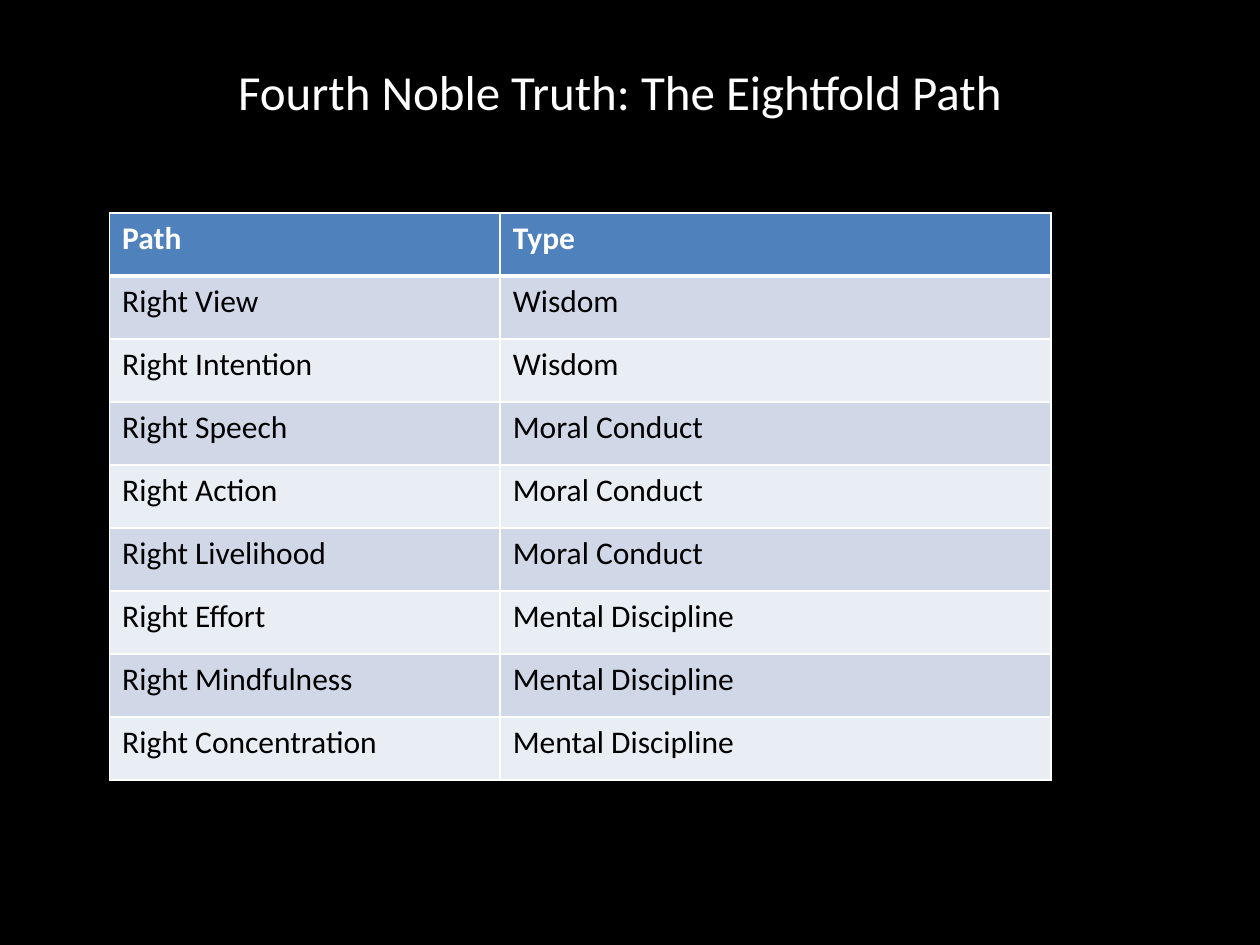
from lxml import etree
from pptx import Presentation
from pptx.dml.color import RGBColor
from pptx.enum.text import MSO_ANCHOR, PP_ALIGN
from pptx.oxml.ns import qn
from pptx.util import Inches, Pt

CENTER = PP_ALIGN.CENTER
MIDDLE = MSO_ANCHOR.MIDDLE
BLACK = RGBColor(0x00, 0x00, 0x00)
WHITE = RGBColor(0xFF, 0xFF, 0xFF)
HEADER_BLUE = RGBColor(0x4F, 0x81, 0xBD)
BANDS = [RGBColor(0xE9, 0xED, 0xF4), RGBColor(0xD0, 0xD8, 0xE8)]

TITLE_FORMAT = {"name": "Calibri", "size": Pt(28), "bold": False}
HEADER_FORMAT = {"name": "Calibri", "size": Pt(18), "bold": True}
BODY_FORMAT = {"name": "Calibri", "size": Pt(18), "bold": False}

ROWS = [
    ("Path", "Type"),
    ("Right View", "Wisdom"),
    ("Right Intention", "Wisdom"),
    ("Right Speech", "Moral Conduct"),
    ("Right Action", "Moral Conduct"),
    ("Right Livelihood", "Moral Conduct"),
    ("Right Effort", "Mental Discipline"),
    ("Right Mindfulness", "Mental Discipline"),
    ("Right Concentration", "Mental Discipline"),
]
COLUMN_WIDTHS = [Inches(3.1), Inches(4.37)]
ROW_HEIGHT = Inches(0.5)


def write_span(para, text, color, text_format):
    span = para.add_run()
    span.text = text
    span.font.color.rgb = color
    for name, value in text_format.items():
        setattr(span.font, name, value)


def add_borders(cell, widths):
    properties = cell._tc.get_or_add_tcPr()
    for position, (side, width) in enumerate(widths.items()):
        line = etree.Element(qn("a:" + side), w=str(Pt(width)))
        fill = etree.SubElement(line, qn("a:solidFill"))
        etree.SubElement(fill, qn("a:srgbClr"), val=str(WHITE))
        properties.insert(position, line)


deck = Presentation()
deck.slide_width = Inches(10)
deck.slide_height = Inches(7.5)
page = deck.slides.add_slide(deck.slide_layouts[6])
page.background.fill.solid()
page.background.fill.fore_color.rgb = BLACK

title_box = page.shapes.add_textbox(Inches(0.42), Inches(0.3), Inches(9), Inches(0.84))
title_box.text_frame.word_wrap = True
title_box.text_frame.vertical_anchor = MIDDLE
title_para = title_box.text_frame.paragraphs[0]
title_para.alignment = CENTER
write_span(title_para, "Fourth Noble Truth: The Eightfold Path", WHITE, TITLE_FORMAT)

table = page.shapes.add_table(
    len(ROWS), len(COLUMN_WIDTHS), Inches(0.87), Inches(1.69),
    sum(COLUMN_WIDTHS), ROW_HEIGHT * len(ROWS),
).table
for column, width in zip(table.columns, COLUMN_WIDTHS):
    column.width = width

for row_index, texts in enumerate(ROWS):
    is_header = row_index == 0
    table.rows[row_index].height = ROW_HEIGHT
    for column_index, text in enumerate(texts):
        cell = table.cell(row_index, column_index)
        cell.fill.solid()
        cell.fill.fore_color.rgb = HEADER_BLUE if is_header else BANDS[row_index % 2]
        write_span(
            cell.text_frame.paragraphs[0], text,
            WHITE if is_header else BLACK,
            HEADER_FORMAT if is_header else BODY_FORMAT,
        )
        add_borders(cell, {
            "lnL": 1,
            "lnR": 1,
            "lnT": 3 if row_index == 1 else 1,
            "lnB": 3 if is_header else 1,
        })

deck.save("out.pptx")
